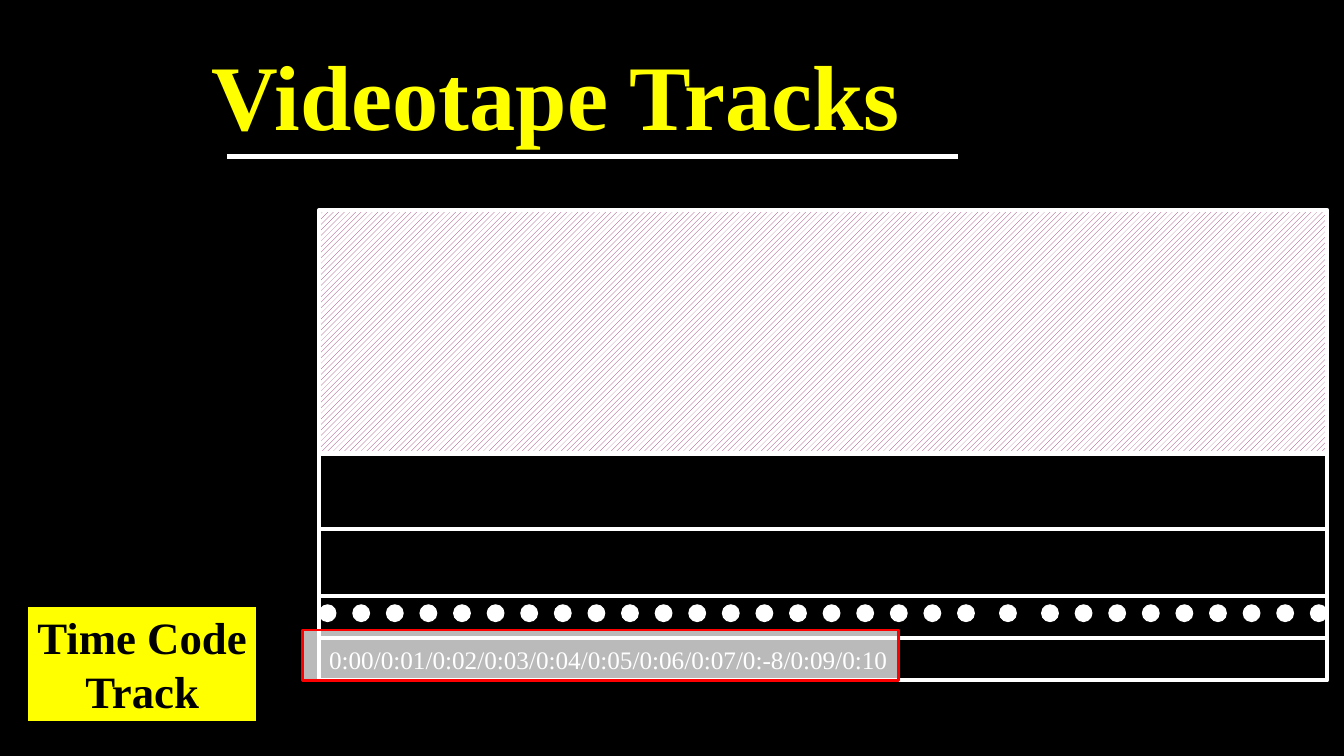
from dataclasses import dataclass

from lxml.etree import SubElement
from pptx import Presentation
from pptx.dml.color import RGBColor
from pptx.enum.dml import MSO_PATTERN
from pptx.enum.shapes import MSO_CONNECTOR, MSO_SHAPE
from pptx.enum.text import MSO_ANCHOR, MSO_AUTO_SIZE, PP_ALIGN
from pptx.oxml.ns import qn
from pptx.util import Pt

# Content
TITLE = "Videotape Tracks"
LABEL = ["Time Code", "Track"]
TIME_CODE = "0:00/0:01/0:02/0:03/0:04/0:05/0:06/0:07/0:-8/0:09/0:10"

# Layout in px, 96 to the inch
PX = 9525
PAGE = (1280, 720)
TITLE_BOX = (192, 32, 682, 116)
RULE = (216, 149, 912, 149)
LABEL_BOX = (25, 576, 221, 113)
HIGHLIGHT = (288, 600, 568, 48)
TAPE_LEFT, TAPE_WIDTH = 304, 960
TRACK_EDGES = [200, 432, 504, 568, 608, 648]
DOT_TOP, DOT_SIZE, DOT_PITCH = 576, 16, 32
DOT_GROUPS = [(304, 20), (952, 1), (992, 9)]  # left of first dot, count


@dataclass(frozen=True)
class Theme:
    font: str = "Times New Roman"
    black: RGBColor = RGBColor(0x00, 0x00, 0x00)
    white: RGBColor = RGBColor(0xFF, 0xFF, 0xFF)
    yellow: RGBColor = RGBColor(0xFF, 0xFF, 0x00)
    red: RGBColor = RGBColor(0xFF, 0x00, 0x00)
    plum: RGBColor = RGBColor(0x93, 0x29, 0x68)
    title_size: int = 66
    label_size: int = 32
    code_size: int = 18
    heavy: float = 3
    medium: float = 2
    thin: float = 0.75
    highlight_alpha: int = 73


THEME = Theme()


def emu(lengths):
    return [length * PX for length in lengths]


def add_block(page, box, fill, line, weight, kind=MSO_SHAPE.RECTANGLE):
    block = page.shapes.add_shape(kind, *emu(box))
    block.shadow.inherit = False
    block.fill.solid()
    block.fill.fore_color.rgb = fill
    block.line.color.rgb = line
    block.line.width = Pt(weight)
    return block


def write(box, lines, size, color, bold=False, align=PP_ALIGN.LEFT,
          anchor=MSO_ANCHOR.TOP, grow=True):
    frame = box.text_frame
    frame.word_wrap = False
    frame.vertical_anchor = anchor
    frame.auto_size = MSO_AUTO_SIZE.SHAPE_TO_FIT_TEXT if grow else MSO_AUTO_SIZE.NONE
    for index, line in enumerate(lines):
        para = frame.add_paragraph() if index else frame.paragraphs[0]
        para.text = line
        para.alignment = align
        para.font.name = THEME.font
        para.font.size = Pt(size)
        para.font.bold = bold
        para.font.color.rgb = color


def add_tracks(page):
    tracks = [
        add_block(page, (TAPE_LEFT, top, TAPE_WIDTH, bottom - top),
                  THEME.black, THEME.white, THEME.heavy)
        for top, bottom in zip(TRACK_EDGES, TRACK_EDGES[1:])
    ]
    video, time_code = tracks[0], tracks[-1]
    video.fill.patterned()
    video.fill.pattern = MSO_PATTERN.WIDE_UPWARD_DIAGONAL
    video.fill.fore_color.rgb = THEME.plum
    video.fill.back_color.rgb = THEME.white
    write(time_code, [TIME_CODE], THEME.code_size, THEME.white,
          anchor=MSO_ANCHOR.MIDDLE, grow=False)


def add_control_dots(page):
    for first, count in DOT_GROUPS:
        for index in range(count):
            box = (first + index * DOT_PITCH, DOT_TOP, DOT_SIZE, DOT_SIZE)
            add_block(page, box, THEME.white, THEME.white, THEME.thin, MSO_SHAPE.OVAL)


def add_heading(page):
    title = page.shapes.add_textbox(*emu(TITLE_BOX))
    write(title, [TITLE], THEME.title_size, THEME.yellow, bold=True)
    rule = page.shapes.add_connector(MSO_CONNECTOR.STRAIGHT, *emu(RULE))
    rule.line.color.rgb = THEME.white
    rule.line.width = Pt(THEME.heavy)
    SubElement(rule._element.spPr, qn("a:effectLst"))


def add_highlight(page):
    highlight = add_block(page, HIGHLIGHT, THEME.white, THEME.red, THEME.medium)
    color = highlight._element.spPr.find(qn("a:solidFill"))[0]
    SubElement(color, qn("a:alpha"), val=str(THEME.highlight_alpha * 1000))


def main():
    deck = Presentation()
    deck.slide_width, deck.slide_height = emu(PAGE)
    page = deck.slides.add_slide(deck.slide_layouts[6])
    page.background.fill.solid()
    page.background.fill.fore_color.rgb = THEME.black

    # Tape
    add_tracks(page)
    add_control_dots(page)

    # Track label
    label = add_block(page, LABEL_BOX, THEME.yellow, THEME.black, THEME.heavy)
    write(label, LABEL, THEME.label_size, THEME.black, bold=True, align=PP_ALIGN.CENTER)

    # Title and time code highlight
    add_heading(page)
    add_highlight(page)
    deck.save("out.pptx")


if __name__ == "__main__":
    main()
